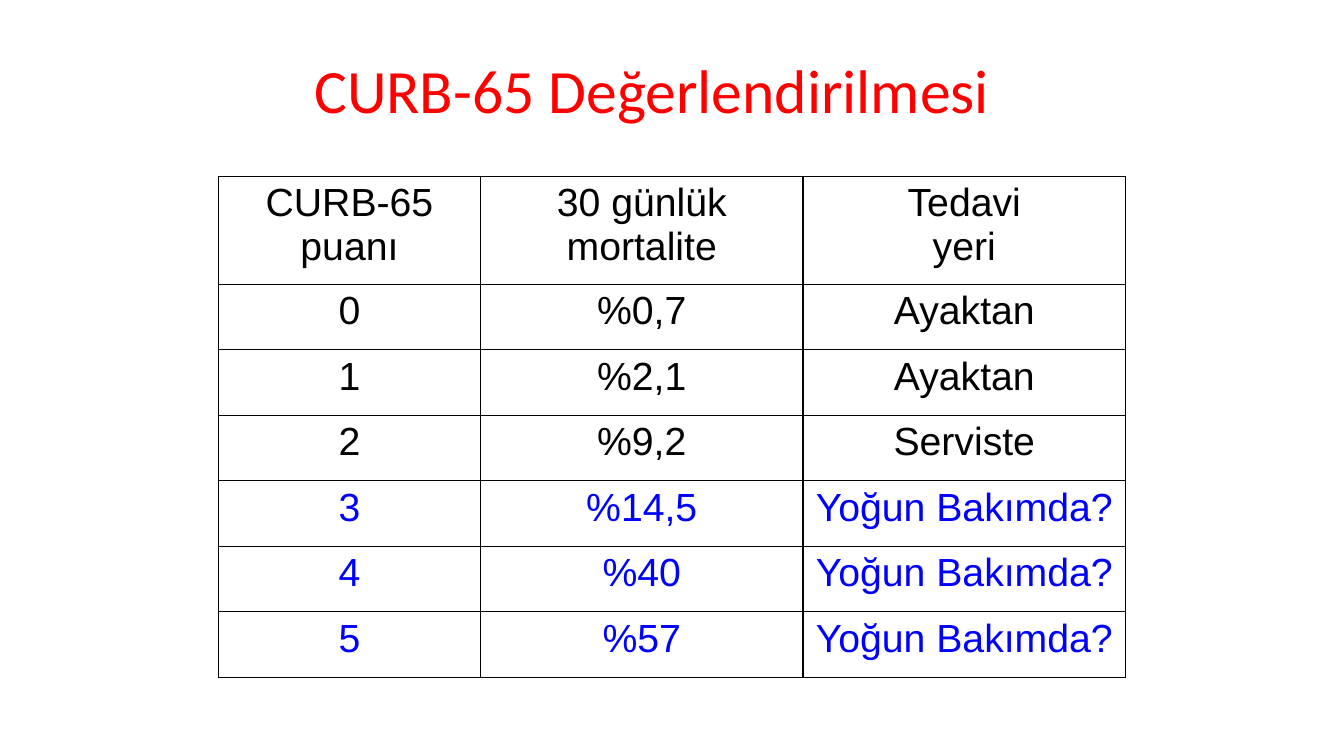
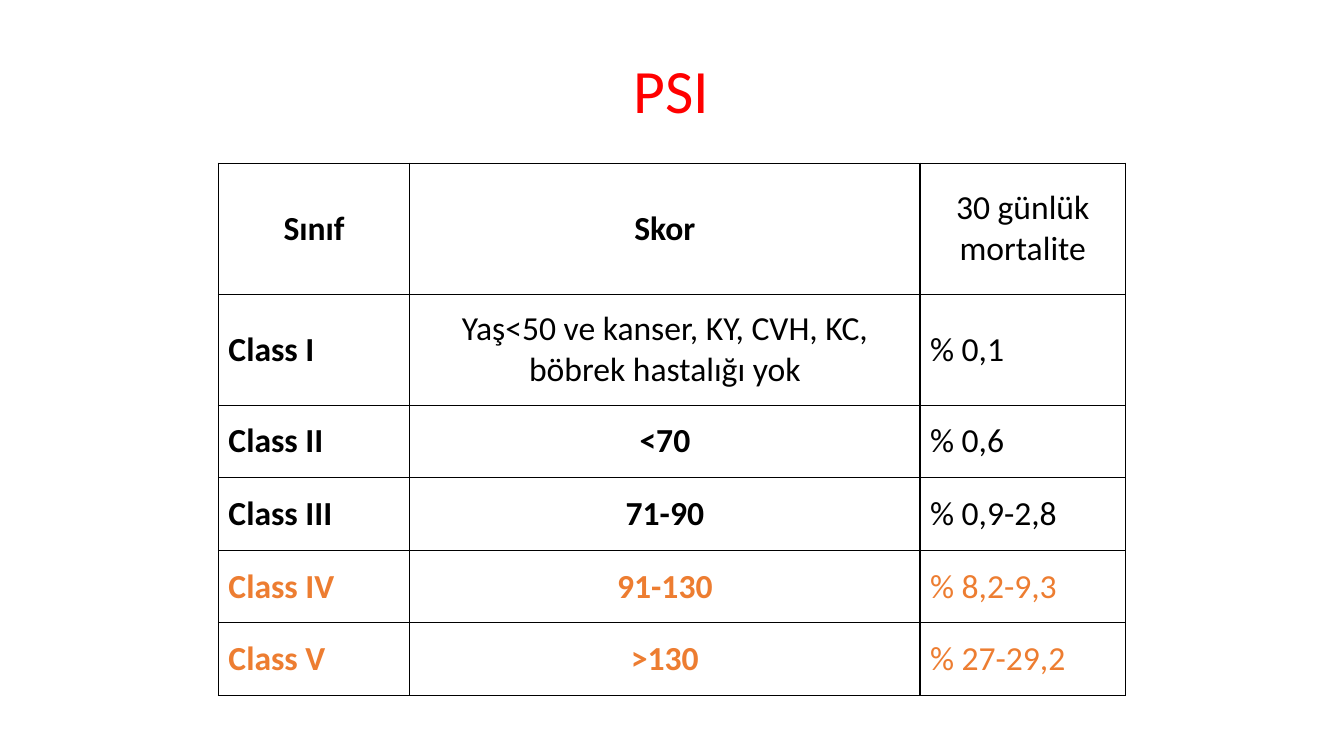
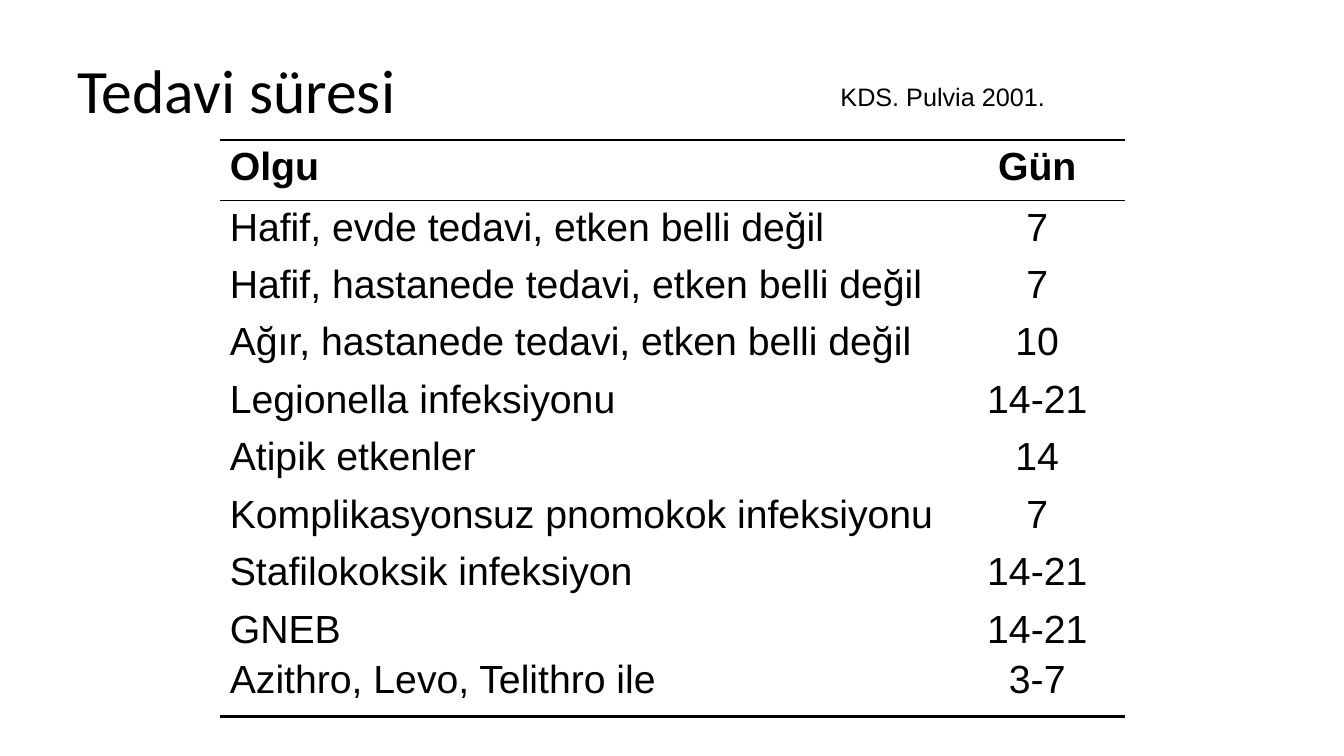
from lxml import etree
from pptx import Presentation
from pptx.dml.color import RGBColor
from pptx.enum.text import MSO_ANCHOR, MSO_AUTO_SIZE, PP_ALIGN
from pptx.oxml.ns import qn
from pptx.util import Inches, Pt

LEFT, CENTER = PP_ALIGN.LEFT, PP_ALIGN.CENTER
TOP, MIDDLE = MSO_ANCHOR.TOP, MSO_ANCHOR.MIDDLE
NO_FIT = MSO_AUTO_SIZE.NONE
TITLE_ONLY = 5
COLS, ROWS = 40, 30
SIDES = "LRTB"
BLACK, RED, BLUE, ORANGE = "000000", "FF0000", "0000FF", "ED7D31"


def rgb(value):
    return RGBColor.from_string(value)


class Deck:
    heading_font, body_font = "Calibri", "Arial"

    def __init__(self):
        self.prs = Presentation()
        self.prs.slide_width = Inches(13.33)
        self.prs.slide_height = Inches(7.5)
        self.slide = None

    def x(self, cols):
        return round(self.prs.slide_width * cols / COLS)

    def y(self, rows):
        return round(self.prs.slide_height * rows / ROWS)

    def box(self, left, top, width, height):
        return self.x(left), self.y(top), self.x(width), self.y(height)

    def run(self, p, text, size, font, color=BLACK, bold=False):
        r = p.add_run()
        r.text = text
        r.font.size, r.font.name, r.font.bold = Pt(size), font, bold
        r.font.color.rgb = rgb(color)

    def title(self, text, color=BLACK, indent=0):
        self.slide = self.prs.slides.add_slide(self.prs.slide_layouts[TITLE_ONLY])
        sp = self.slide.shapes.title
        sp.left, sp.top, sp.width, sp.height = self.box(2, 1.2, 36, 5)
        tf = sp.text_frame
        tf.auto_size, tf.vertical_anchor = NO_FIT, MIDDLE
        tf.margin_left = Inches(0.1) + self.x(indent)
        p = tf.paragraphs[0]
        p.alignment, p.line_spacing = LEFT, 0.9
        self.run(p, text, 44, self.heading_font, color)

    def note(self, text, left, top, width, height):
        tf = self.slide.shapes.add_textbox(*self.box(left, top, width, height)).text_frame
        tf.word_wrap = True
        self.run(tf.paragraphs[0], text, 18, self.body_font)

    def borders(self, cell, widths):
        tcPr = cell._tc.get_or_add_tcPr()
        for side in SIDES:
            width = widths.get(side, 0)
            ln = etree.SubElement(tcPr, qn("a:ln" + side), w=str(Pt(width)))
            if width:
                fill = etree.SubElement(ln, qn("a:solidFill"))
                etree.SubElement(fill, qn("a:srgbClr"), val=BLACK)
            else:
                etree.SubElement(ln, qn("a:noFill"))

    def table(self, left, top, widths, heights, rows, style, lines):
        frame = self.slide.shapes.add_table(
            len(rows), len(widths), *self.box(left, top, sum(widths), sum(heights)))
        table = frame.table
        table.first_row = table.horz_banding = False
        for column, width in zip(table.columns, widths):
            column.width = self.x(width)
        for i, (row, height) in enumerate(zip(rows, heights)):
            table.rows[i].height = self.y(height)
            for j, text in enumerate(row):
                cell = table.cell(i, j)
                self.borders(cell, lines(i))
                cell.fill.background()
                self.cell_text(cell, text, **style(i, j))

    def cell_text(self, cell, text, size, font, color=BLACK, bold=False,
                  align=CENTER, anchor=TOP):
        cell.vertical_anchor = anchor
        tf = cell.text_frame
        for n, line in enumerate(text.split("\n")):
            p = tf.add_paragraph() if n else tf.paragraphs[0]
            p.alignment = align
            if n and align_gap(cell):
                p.space_before = Pt(4.5)
            self.run(p, line, size, font, color, bold)


def align_gap(cell):
    return cell.text_frame.paragraphs[0].runs[0].text != "Tedavi"


def full_grid(i):
    return dict.fromkeys(SIDES, 1)


def curb_slide(deck):
    deck.title("CURB-65 Değerlendirilmesi", RED, 7.05)
    rows = [
        ("CURB-65 puanı", "30 günlük mortalite", "Tedavi\nyeri"),
        ("0", "%0,7", "Ayaktan"),
        ("1", "%2,1", "Ayaktan"),
        ("2", "%9,2", "Serviste"),
        ("3", "%14,5", "Yoğun Bakımda?"),
        ("4", "%40", "Yoğun Bakımda?"),
        ("5", "%57", "Yoğun Bakımda?"),
    ]

    def style(i, j):
        return dict(size=28, font=deck.body_font, color=BLUE if i > 3 else BLACK)

    deck.table(6.5, 7, [7.8, 9.6, 9.6], [4.28] + [2.6] * 6, rows, style, full_grid)


def psi_slide(deck):
    deck.title("PSI", RED, 16.56)
    rows = [
        ("Sınıf", "Skor", "30 günlük mortalite"),
        ("Class I", "Yaş<50 ve kanser, KY, CVH, KC, böbrek hastalığı yok", "% 0,1"),
        ("Class II", "<70", "% 0,6"),
        ("Class III", "71-90", "% 0,9-2,8"),
        ("Class IV", "91-130", "% 8,2-9,3"),
        ("Class V", ">130", "% 27-29,2"),
    ]

    def style(i, j):
        return dict(size=24, font=deck.heading_font, anchor=MIDDLE,
                    color=ORANGE if i > 3 else BLACK,
                    bold=j < 2 and (i, j) != (1, 1),
                    align=CENTER if i == 0 or j == 1 else LEFT)

    deck.table(6.5, 6.48, [5.7, 15.18, 6.12], [5.2, 4.4] + [2.88] * 4,
               rows, style, full_grid)


def duration_slide(deck):
    deck.title("Tedavi süresi")
    rows = [
        ("Olgu", "Gün"),
        ("Hafif, evde tedavi, etken belli değil", "7"),
        ("Hafif, hastanede tedavi, etken belli değil", "7"),
        ("Ağır, hastanede tedavi, etken belli değil", "10"),
        ("Legionella infeksiyonu", "14-21"),
        ("Atipik etkenler", "14"),
        ("Komplikasyonsuz pnomokok infeksiyonu", "7"),
        ("Stafilokoksik infeksiyon", "14-21"),
        ("GNEB\nAzithro, Levo, Telithro ile", "14-21\n3-7"),
    ]
    rules = {0: {"T": 2.25, "B": 1}, 1: {"T": 1}, len(rows) - 1: {"B": 2.25}}

    def style(i, j):
        return dict(size=28, font=deck.body_font, bold=i == 0,
                    align=CENTER if j else LEFT)

    deck.table(6.54, 5.56, [21.72, 5.22], [2.4] + [2.28] * 7 + [4.52],
               rows, style, lambda i: rules.get(i, {}))
    deck.note("KDS. Pulvia 2001.", 24.72, 3.04, 7.8, 1.6)


def main():
    deck = Deck()
    curb_slide(deck)
    psi_slide(deck)
    duration_slide(deck)
    deck.prs.save("out.pptx")


if __name__ == "__main__":
    main()
